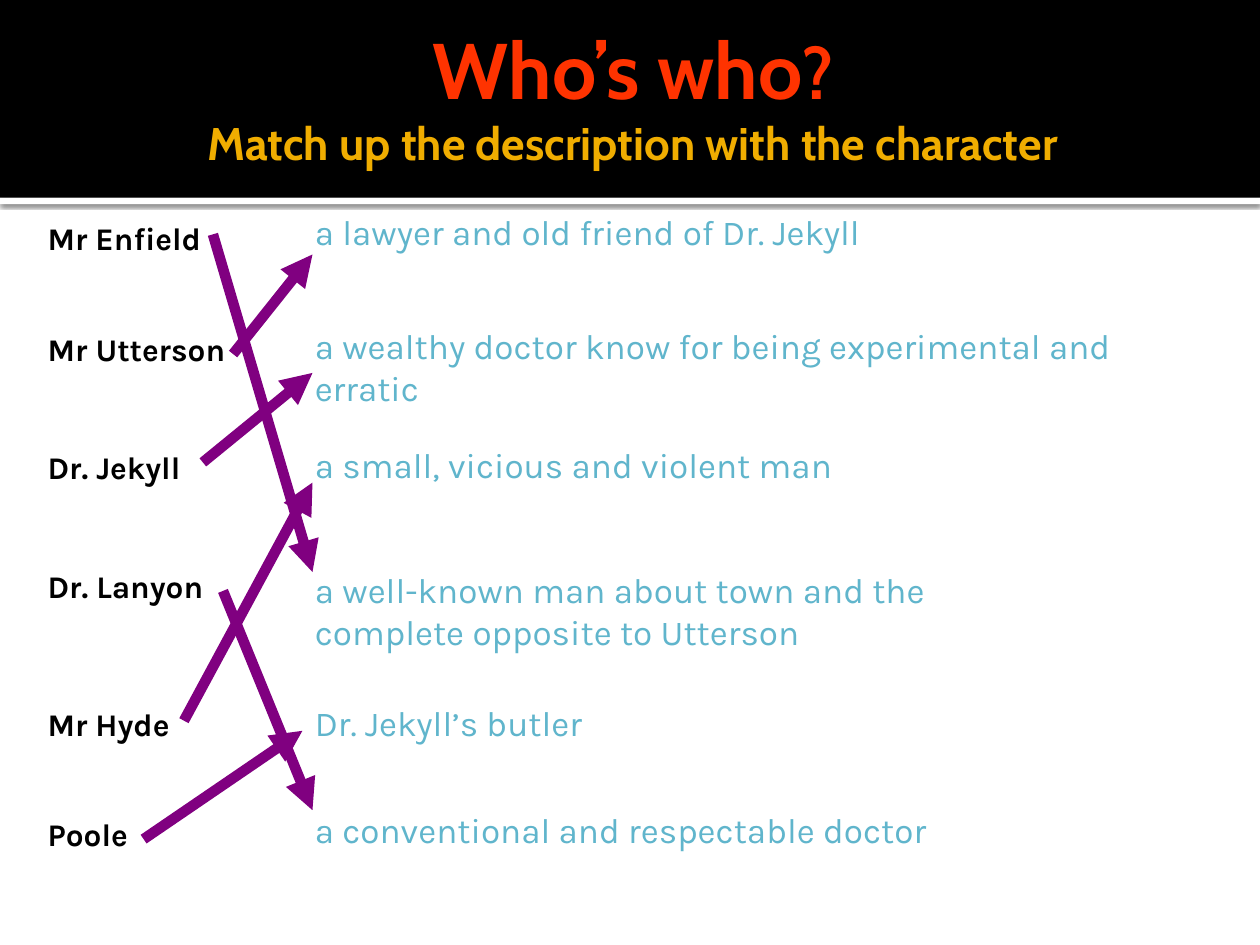
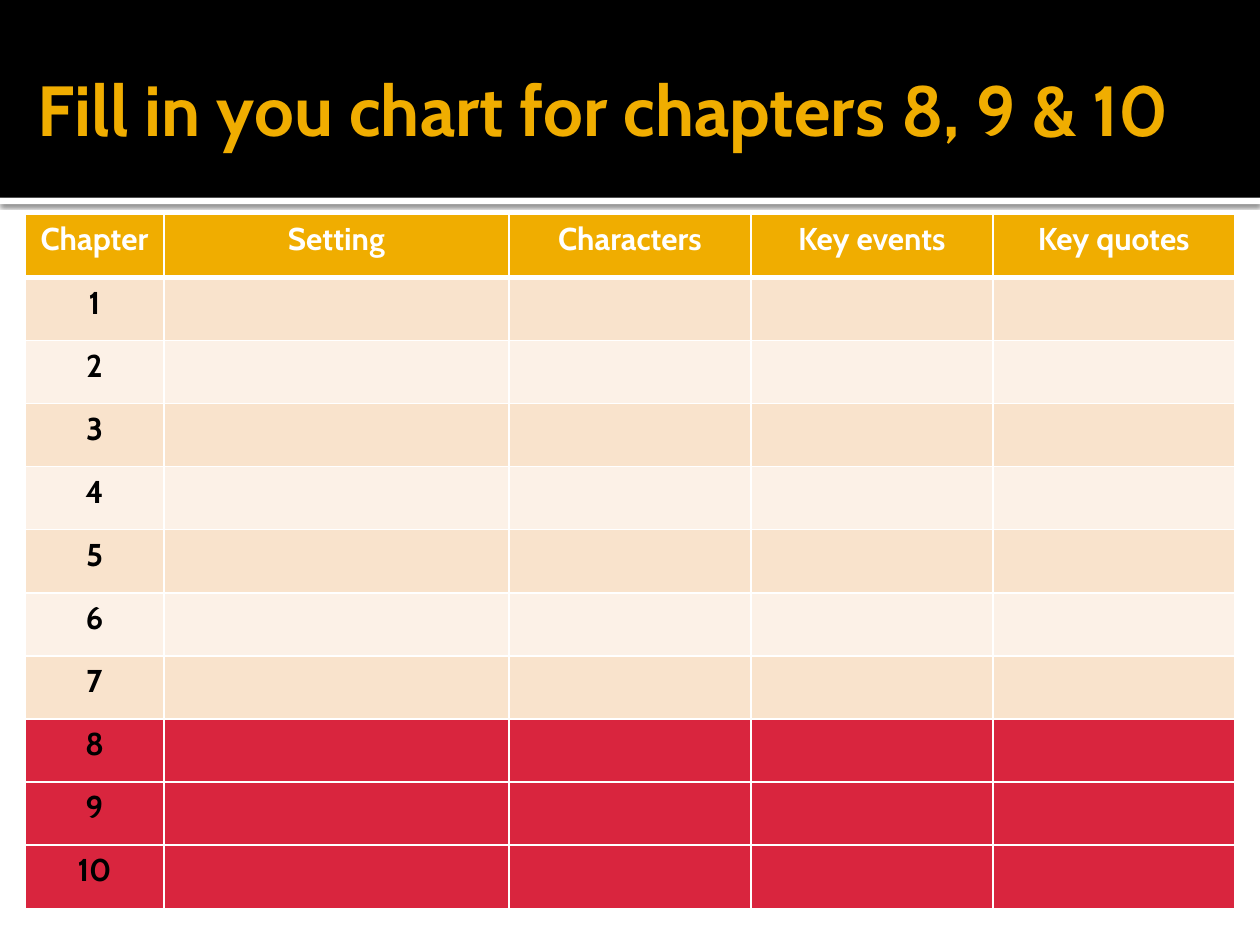
from lxml.etree import SubElement
from pptx import Presentation
from pptx.dml.color import RGBColor
from pptx.enum.shapes import MSO_CONNECTOR, MSO_SHAPE
from pptx.enum.text import MSO_ANCHOR, MSO_AUTO_SIZE, PP_ALIGN
from pptx.oxml.ns import qn
from pptx.util import Inches, Pt

BLACK = RGBColor(0x00, 0x00, 0x00)
WHITE = RGBColor(0xFF, 0xFF, 0xFF)
GOLD = RGBColor(0xF0, 0xAD, 0x00)
ORANGE = RGBColor(0xFF, 0x33, 0x00)
BLUE = RGBColor(0x60, 0xB5, 0xCC)
PURPLE = RGBColor(0x80, 0x00, 0x80)
PEACH = RGBColor(0xF9, 0xE3, 0xCC)
CREAM = RGBColor(0xFC, 0xF1, 0xE7)
RED = RGBColor(0xD9, 0x25, 0x3E)
HEAD_FONT, BODY_FONT = "Cabin", "Karla"

# Name, top, width
NAMES = [
    ("Mr Enfield", 1.69, 1.57),
    ("Mr Utterson", 2.57, 1.81),
    ("Dr. Jekyll", 3.51, 1.57),
    ("Dr. Lanyon", 4.45, 1.57),
    ("Mr Hyde", 5.55, 1.57),
    ("Poole", 6.42, 1.57),
]
# Description, top, width, height
ROLES = [
    ("a lawyer and old friend of Dr. Jekyll", 1.62, 6.22, 0.43),
    ("a wealthy doctor know for being experimental and erratic", 2.53, 7.24, 0.77),
    ("a small, vicious and violent man", 3.47, 7.09, 0.43),
    ("a well-known man about town and the complete opposite to Utterson",
     4.46, 6.22, 0.77),
    ("Dr. Jekyll’s butler", 5.52, 6.22, 0.43),
    ("a conventional and respectable doctor", 6.37, 6.22, 0.43),
]
# Start and end of each answer arrow
ARROWS = [
    (1.69, 1.86, 2.48, 4.54),
    (1.85, 2.81, 2.48, 2.02),
    (1.61, 3.67, 2.48, 2.96),
    (1.77, 4.69, 2.48, 6.43),
    (1.46, 5.72, 2.48, 3.83),
    (1.14, 6.66, 2.40, 5.80),
]
HEADS = ["Chapter", "Setting", "Characters", "Key events", "Key quotes"]
WIDTHS = [1.1, 2.74, 1.92, 1.92, 1.92]
CHAPTERS, FIRST_DUE = 10, 8


def style(font, name, size, color, bold=True):
    font.name, font.size, font.bold = name, Pt(size), bold
    font.color.rgb = color


def add_color(parent, color):
    fill = SubElement(parent, qn("a:solidFill"))
    return SubElement(fill, qn("a:srgbClr"), val=str(color))


def add_band(slide, top, height, color):
    """Draw a full-width band and move it to the back of the shared layout."""
    band = slide.shapes.add_shape(
        MSO_SHAPE.RECTANGLE, 0, Inches(top), Inches(10), Inches(height))
    band.shadow.inherit = False
    band.fill.solid()
    band.fill.fore_color.rgb = color
    band.line.fill.background()
    slide.slide_layout.shapes._spTree.insert(2, band._element)
    return band


def add_shadow(shape):
    effects = shape._element.spPr.find(qn("a:effectLst"))
    shadow = SubElement(effects, qn("a:outerShdw"), blurRad=str(Pt(2.5)),
                        dist=str(Pt(0.8)), dir="5400000", rotWithShape="0")
    tint = SubElement(shadow, qn("a:srgbClr"), val=str(BLACK))
    SubElement(tint, qn("a:alpha"), val="60000")


def set_title(slide, left, top, width, height, align):
    """Place the title and return its empty paragraph."""
    title = slide.shapes.title
    title.left, title.top = Inches(left), Inches(top)
    title.width, title.height = Inches(width), Inches(height)
    frame = title.text_frame
    frame.auto_size = MSO_AUTO_SIZE.NONE
    frame.vertical_anchor = MSO_ANCHOR.MIDDLE
    frame.margin_left = Inches(0.1)
    frame.margin_right = frame.margin_top = frame.margin_bottom = Inches(0.05)
    line = frame.paragraphs[0]
    line.alignment = align
    return line


def add_run(line, text, size, color):
    run = line.add_run()
    run.text = text
    style(run.font, HEAD_FONT, size, color)


def add_label(slide, text, left, top, width, height, size, color, bold):
    box = slide.shapes.add_textbox(
        Inches(left), Inches(top), Inches(width), Inches(height))
    frame = box.text_frame
    frame.word_wrap = True
    frame.auto_size = MSO_AUTO_SIZE.SHAPE_TO_FIT_TEXT
    frame.text = text
    style(frame.paragraphs[0].font, BODY_FONT, size, color, bold)


def add_arrow(slide, *ends):
    arrow = slide.shapes.add_connector(
        MSO_CONNECTOR.STRAIGHT, *[Inches(end) for end in ends])
    arrow.line.color.rgb = PURPLE
    arrow.line.width = Pt(6)
    SubElement(arrow.line._get_or_add_ln(), qn("a:tailEnd"), type="triangle")
    SubElement(arrow._element.spPr, qn("a:effectLst"))


def fill_cell(cell, text, fill, color, base):
    """Write one cell; base is the width of its lower border."""
    props = cell._tc.get_or_add_tcPr()
    for side, width in (("L", 1), ("R", 1), ("T", 1), ("B", base)):
        edge = SubElement(props, qn(f"a:ln{side}"), w=str(Pt(width)))
        add_color(edge, WHITE)
    cell.fill.solid()
    cell.fill.fore_color.rgb = fill
    if text:
        cell.text = text
        line = cell.text_frame.paragraphs[0]
        line.alignment = PP_ALIGN.CENTER
        style(line.font, HEAD_FONT, 18, color)


def add_grid(slide):
    grid = slide.shapes.add_table(
        CHAPTERS + 1, len(HEADS), Inches(0.2), Inches(1.7),
        Inches(sum(WIDTHS)), Inches(5.51)).table
    for column, width in zip(grid.columns, WIDTHS):
        column.width = Inches(width)
    for col, head in enumerate(HEADS):
        fill_cell(grid.cell(0, col), head, GOLD, WHITE, 3)
        for row in range(1, CHAPTERS + 1):
            shade = RED if row >= FIRST_DUE else PEACH if row % 2 else CREAM
            text = str(row) if col == 0 else ""
            fill_cell(grid.cell(row, col), text, shade, BLACK, 1)
            if row == 1:
                top = grid.cell(row, col)._tc.tcPr.find(qn("a:lnT"))
                top.set("w", str(Pt(3)))


def build_match(slide):
    line = set_title(slide, 0, 0.36, 10, 0.79, PP_ALIGN.CENTER)
    add_run(line, "Who’s who", 45, ORANGE)
    add_run(line, "?", 40.5, ORANGE)
    line.add_line_break()
    add_run(line, "Match up the description with the character", 26.1, GOLD)
    for name, top, width in NAMES:
        add_label(slide, name, 0.28, top, width, 0.4, 18, BLACK, True)
    for role, top, width, height in ROLES:
        add_label(slide, role, 2.4, top, width, height, 20, BLUE, False)
    for ends in ARROWS:
        add_arrow(slide, *ends)


def build_chart(slide):
    line = set_title(slide, 0.2, 0.17, 9.53, 1.37, PP_ALIGN.LEFT)
    add_run(line, "Fill in you chart for chapters 8, 9 & 10", 40.5, GOLD)
    add_grid(slide)


def main():
    deck = Presentation()
    deck.slide_width, deck.slide_height = Inches(10), Inches(7.5)
    layout = deck.slide_layouts[5]
    match, chart = [deck.slides.add_slide(layout) for _ in range(2)]

    # Header bands shared through the layout
    add_band(match, 0, 1.57, BLACK)
    add_shadow(add_band(match, 1.57, 0.05, WHITE))

    build_match(match)
    build_chart(chart)
    deck.save("out.pptx")


if __name__ == "__main__":
    main()
